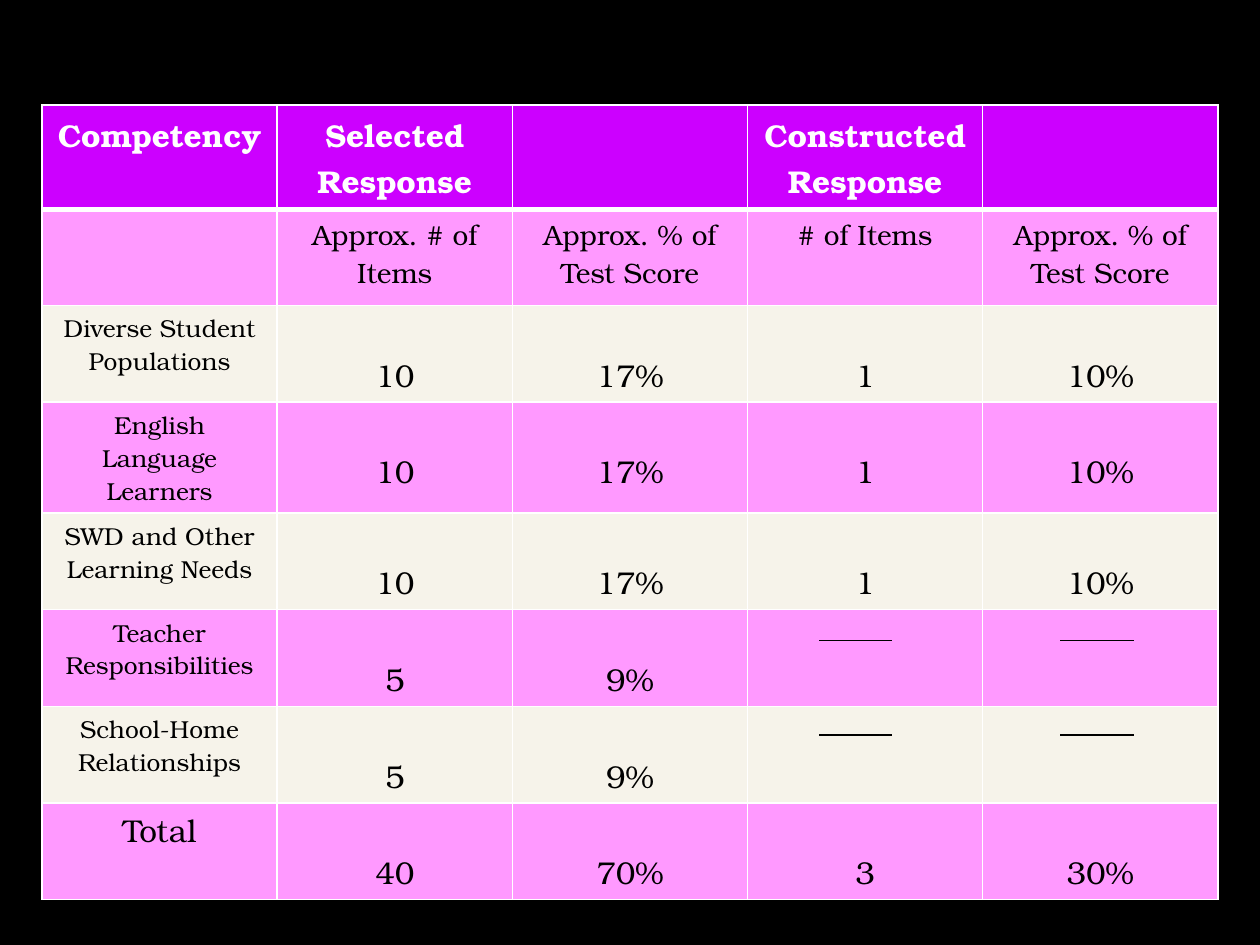
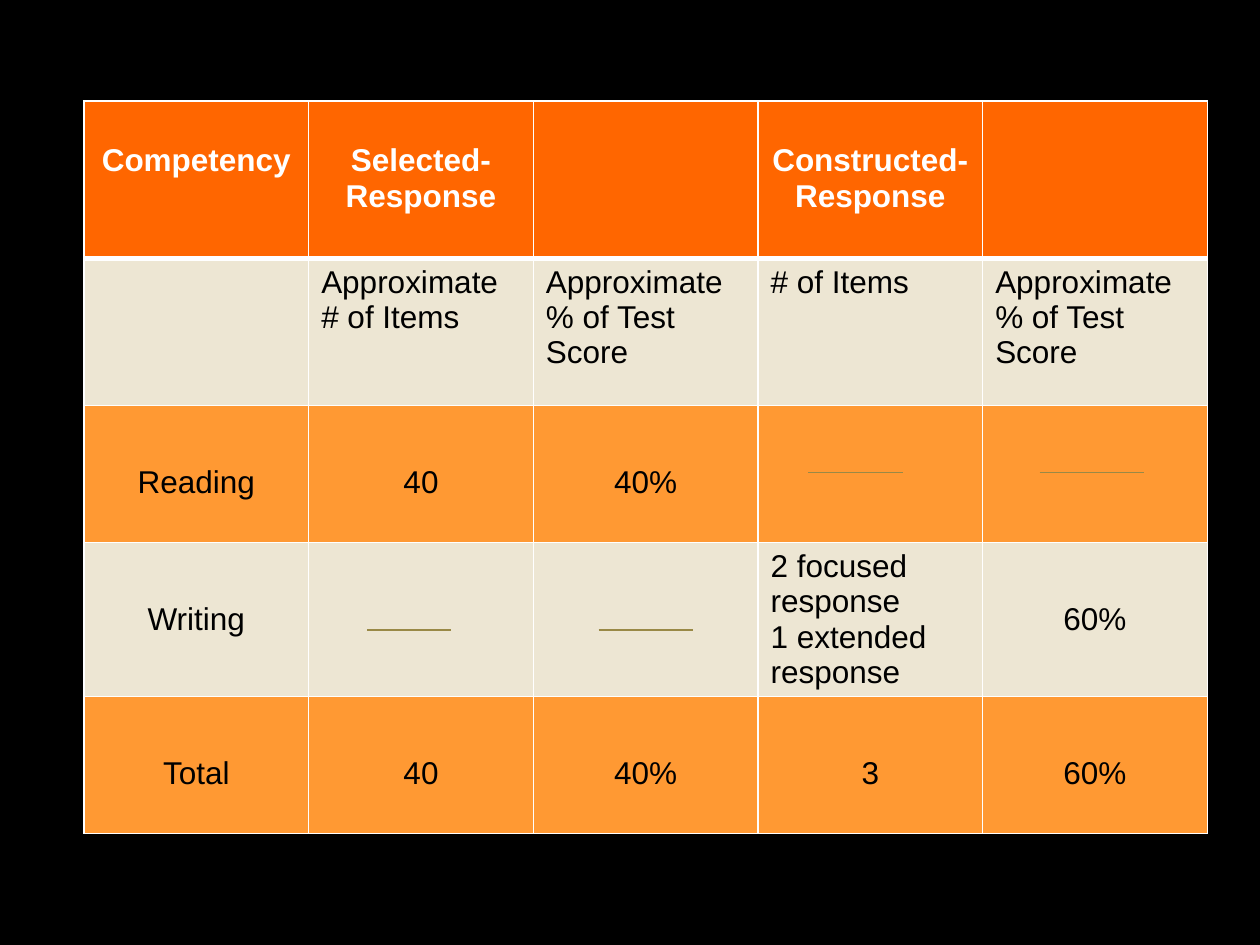
from lxml import etree
from pptx import Presentation
from pptx.dml.color import RGBColor
from pptx.enum.shapes import MSO_CONNECTOR
from pptx.enum.text import PP_ALIGN
from pptx.oxml.ns import qn
from pptx.util import Pt

LEFT, CENTER = PP_ALIGN.LEFT, PP_ALIGN.CENTER
STRAIGHT = MSO_CONNECTOR.STRAIGHT
BLANK_LAYOUT = 6

BLACK = RGBColor(0x00, 0x00, 0x00)
WHITE = RGBColor(0xFF, 0xFF, 0xFF)
PURPLE = RGBColor(0xCC, 0x00, 0xFF)
PINK = RGBColor(0xFF, 0x99, 0xFF)
CREAM = RGBColor(0xF6, 0xF3, 0xEA)
ORANGE = RGBColor(0xFF, 0x66, 0x00)
AMBER = RGBColor(0xFF, 0x99, 0x33)
SAND = RGBColor(0xED, 0xE6, 0xD3)
OLIVE = RGBColor(0x99, 0x89, 0x46)

ESL_ROWS = [
    ["Competency", "Selected Response", "", "Constructed Response", ""],
    ["", "Approx. # of Items", "Approx. % of Test Score", "# of Items",
     "Approx. % of Test Score"],
    ["Diverse Student Populations", "10", "17%", "1", "10%"],
    ["English Language Learners", "10", "17%", "1", "10%"],
    ["SWD and Other Learning Needs", "10", "17%", "1", "10%"],
    ["Teacher Responsibilities", "5", "9%", "", ""],
    ["School-Home Relationships", "5", "9%", "", ""],
    ["Total", "40", "70%", "3", "30%"],
]
LITERACY_ROWS = [
    ["Competency", "Selected-Response", "", "Constructed-Response", ""],
    ["", "Approximate # of Items", "Approximate % of Test Score", "# of Items",
     "Approximate % of Test Score"],
    ["Reading", "40", "40%", "", ""],
    ["Writing", "", "", "2 focused response\n1 extended response", "60%"],
    ["Total", "40", "40%", "3", "60%"],
]


def write(tf, text, font, size=18, color=BLACK, bold=False, align=CENTER, spacing=None):
    """Fill a text frame, one paragraph for each line of text."""
    for i, line in enumerate(text.split("\n")):
        p = tf.paragraphs[0] if i == 0 else tf.add_paragraph()
        p.alignment = align
        if spacing:
            p.line_spacing = spacing
        r = p.add_run()
        r.text = line
        r.font.name = font
        r.font.size = Pt(size)
        r.font.bold = bold
        r.font.color.rgb = color


def set_borders(cell, **widths):
    """Draw white borders round a cell, widths in points by side."""
    tc_pr = cell._tc.get_or_add_tcPr()
    for i, side in enumerate("LRTB"):
        ln = etree.Element(qn(f"a:ln{side}"), w=str(Pt(widths.get(side, 1))))
        fill = etree.SubElement(ln, qn("a:solidFill"))
        etree.SubElement(fill, qn("a:srgbClr"), val=str(WHITE))
        tc_pr.insert(i, ln)


class Deck:
    """Presentation with black slides, score tables and dash lines."""

    def __init__(self):
        self.prs = Presentation()
        self.prs.slide_width, self.prs.slide_height = Pt(720), Pt(540)
        self.s = None
        self.font = None

    def slide(self, font):
        """Start a black slide whose text uses the given font."""
        self.s = self.prs.slides.add_slide(self.prs.slide_layouts[BLANK_LAYOUT])
        self.s.background.fill.solid()
        self.s.background.fill.fore_color.rgb = BLACK
        self.font = font

    def table(self, rows, left, top, width, heights, header_fill, bands,
              cell_format, header_margin=3.6):
        """Add a table with a header row and alternating bands."""
        columns = len(rows[0])
        table = self.s.shapes.add_table(len(rows), columns, Pt(left), Pt(top),
                                        Pt(width), Pt(sum(heights))).table
        for column in table.columns:
            column.width = Pt(width / columns)
        for r, (texts, height) in enumerate(zip(rows, heights)):
            table.rows[r].height = Pt(height)
            for c, text in enumerate(texts):
                cell = table.cell(r, c)
                cell.fill.solid()
                cell.fill.fore_color.rgb = bands[(r - 1) % 2] if r else header_fill
                set_borders(cell, T=3 if r == 1 else 1, B=1 if r else 3)
                if r == 0:
                    cell.margin_top = Pt(header_margin)
                if text:
                    style = cell_format(r, c, text) if r else {"color": WHITE, "bold": True}
                    write(cell.text_frame, text, self.font, **style)

    def dash(self, x1, x2, y, color):
        """Draw a thin level line that marks an empty value."""
        line = self.s.shapes.add_connector(STRAIGHT, Pt(x1), Pt(y), Pt(x2), Pt(y))
        line.line.color.rgb = color
        line.line.width = Pt(0.75)
        etree.SubElement(line._element.spPr, qn("a:effectLst"))


def esl_format(r, c, text):
    """Return the text format of a body cell in the first table."""
    if r == 1:
        return {"size": 16}
    if c == 0:
        return {"size": 18 if text == "Total" else 14}
    return {"spacing": 2.0}


def literacy_format(r, c, text):
    """Return the text format of a body cell in the second table."""
    if r == 1 or "\n" in text:
        return {"align": LEFT}
    return {"spacing": 2.5}


def main():
    """Build both slides and save them."""
    deck = Deck()

    deck.slide("TeX Gyre Bonum")
    deck.table(ESL_ROWS, 24, 60, 672, [59] + [54.7] * 7, PURPLE, (PINK, CREAM), esl_format)
    for y in (366, 420):
        for x in (468, 606):
            deck.dash(x, x + 42, y, BLACK)

    deck.slide("Arial")
    deck.table(LITERACY_ROWS, 48, 57.6, 642, [90, 84] + [78.5] * 3, ORANGE, (SAND, AMBER),
               literacy_format, header_margin=24.3)
    for x1, x2, y in ((462, 516, 270), (594, 654, 270), (210, 258, 360), (342, 396, 360)):
        deck.dash(x1, x2, y, OLIVE)

    deck.prs.save("out.pptx")


if __name__ == "__main__":
    main()
